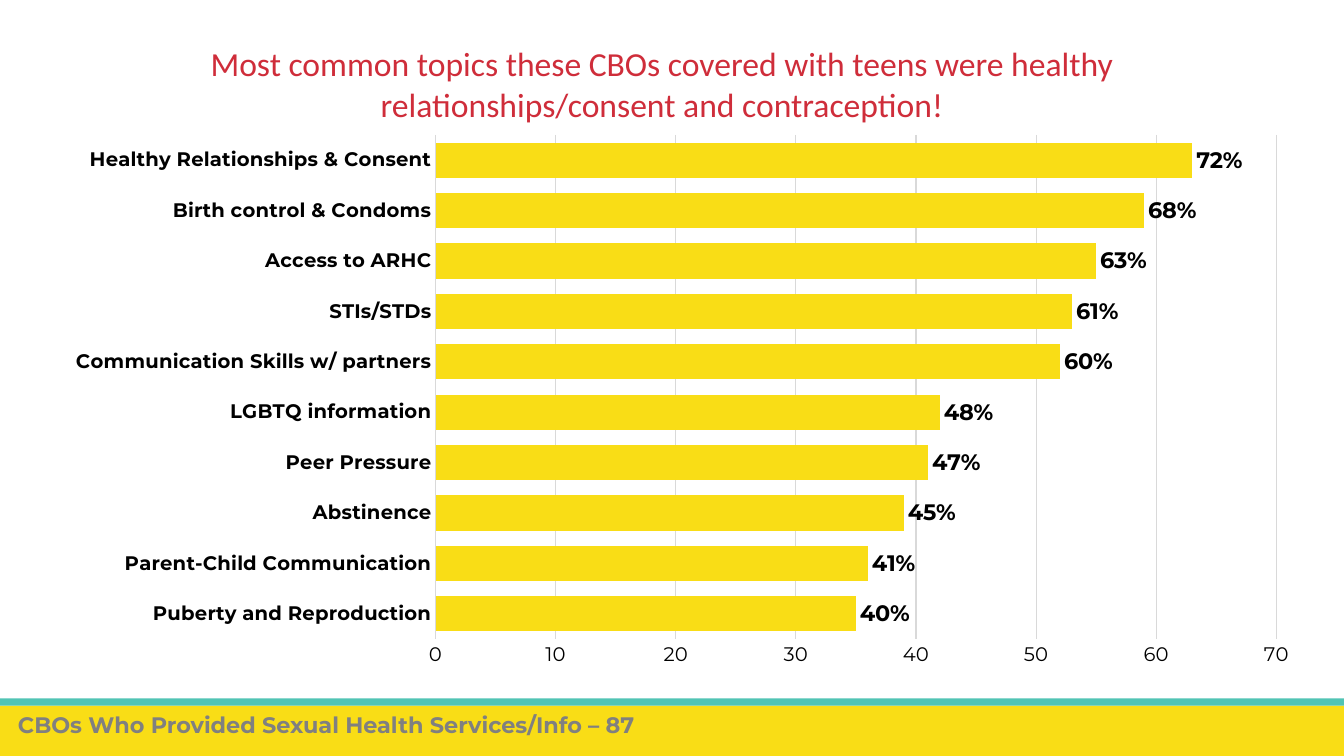
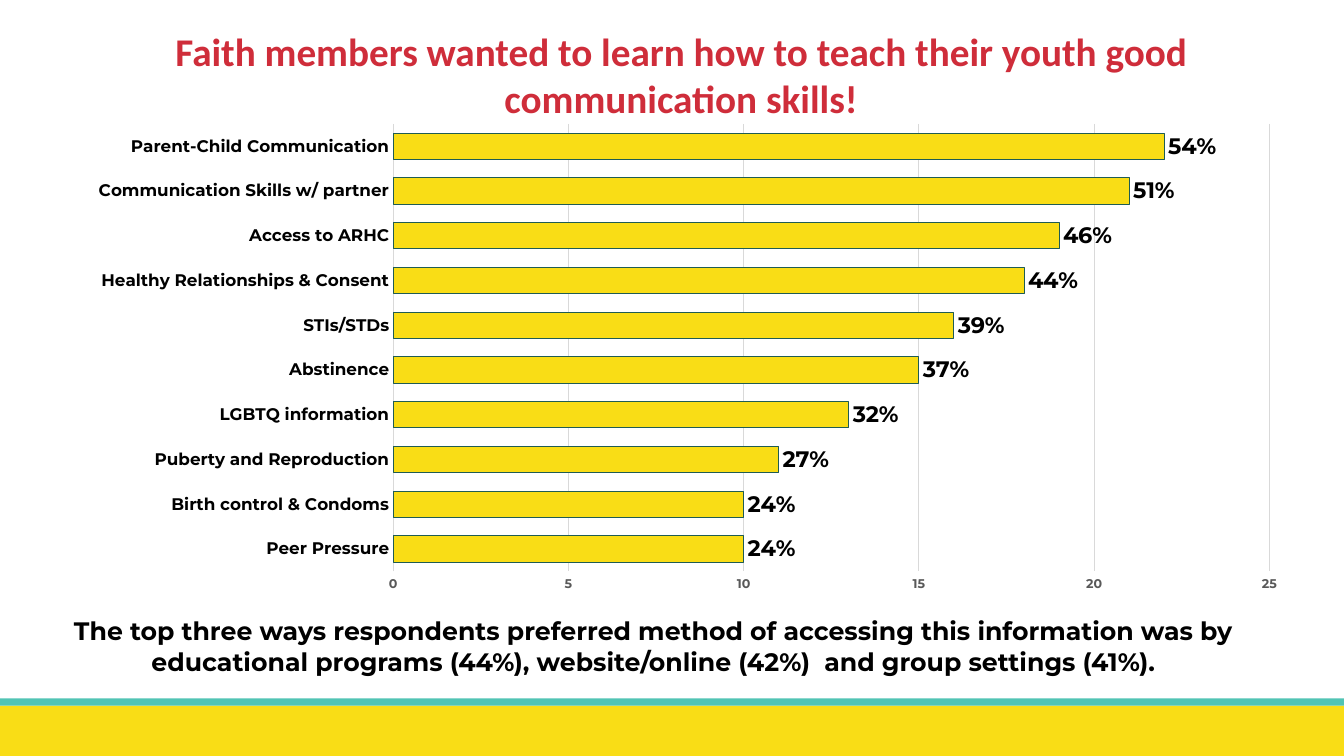
from pptx import Presentation
from pptx import util as u
from pptx.chart import data
from pptx.dml.color import RGBColor
from pptx.enum import chart as charts, shapes, text
from pptx.oxml import parse_xml
from pptx.oxml.ns import nsdecls


class Theme:
    yellow, teal, dark_teal = "F9DD16", "51C4B4", "1F5C53"
    red, black, gray, tick_gray, rule = "CF2D3A", "000000", "808080", "595959", "D9D9D9"
    heading, body = "Calibri", "Montserrat"
    title, big_title, note, label = 24, 28, 18, 16
    category, small_category, tick = 14, 12, 9
    hairline = 0.75


def set_font(font, size, color, name=Theme.body, bold=True):
    values = {"size": u.Pt(size), "name": name, "bold": bold}
    for key, value in values.items():
        setattr(font, key, value)
    font.color.rgb = RGBColor.from_string(color)


def set_line(line, color):
    line.color.rgb = RGBColor.from_string(color)
    line.width = u.Pt(Theme.hairline)


CENTER, LEFT = text.PP_ALIGN.CENTER, text.PP_ALIGN.LEFT

# Each text: words, box, alignment, font values. Topics: name, count, share.
PAGES = [
    {
        "texts": [
            ("Most common topics these CBOs covered with teens were healthy "
             "relationships/consent and contraception!",
             (0.61, 0.38, 11.91, 0.91), CENTER,
             (Theme.title, Theme.red, Theme.heading, False)),
            ("CBOs Who Provided Sexual Health Services/Info – 87",
             (0.08, 7.01, 10.86, 0.37), LEFT, (Theme.label, Theme.gray)),
        ],
        "chart": (0.51, 1.23, 12.53, 5.5),
        "plot": (4.32, 1.34, 8.34, 5),
        "gap": 43, "top": 70, "step": 10, "outline": None,
        "category": (Theme.category, Theme.black),
        "tick": (Theme.category, Theme.black, Theme.body, False),
        "topics": [
            ("Puberty and Reproduction", 35, 0.40),
            ("Parent-Child Communication", 36, 0.41),
            ("Abstinence", 39, 0.45),
            ("Peer Pressure", 41, 0.47),
            ("LGBTQ information", 42, 0.48),
            ("Communication Skills w/ partners", 52, 0.60),
            ("STIs/STDs", 53, 0.61),
            ("Access to ARHC", 55, 0.63),
            ("Birth control & Condoms", 59, 0.68),
            ("Healthy Relationships & Consent", 63, 0.72),
        ],
    },
    {
        "texts": [
            ("Faith members wanted to learn how to teach their youth good "
             "communication skills!",
             (0.73, 0.22, 12.05, 1.04), CENTER,
             (Theme.big_title, Theme.red, Theme.heading)),
            ("The top three ways respondents preferred method of accessing this "
             "information was by educational programs (44%), website/online (42%)  "
             "and group settings (41%).",
             (0.52, 6.06, 11.92, 0.71), CENTER, (Theme.note, Theme.black)),
        ],
        "chart": (0.73, 1.13, 12.18, 4.83),
        "plot": (3.9, 1.23, 8.69, 4.44),
        "gap": 70, "top": 25, "step": 5, "outline": Theme.dark_teal,
        "category": (Theme.small_category, Theme.black),
        "tick": (Theme.tick, Theme.tick_gray),
        "topics": [
            ("Peer Pressure", 10, 0.24),
            ("Birth control & Condoms", 10, 0.24),
            ("Puberty and Reproduction", 11, 0.27),
            ("LGBTQ information", 13, 0.32),
            ("Abstinence", 15, 0.37),
            ("STIs/STDs", 16, 0.39),
            ("Healthy Relationships & Consent", 18, 0.44),
            ("Access to ARHC", 19, 0.46),
            ("Communication Skills w/ partner", 21, 0.51),
            ("Parent-Child Communication", 22, 0.54),
        ],
    },
]

deck = Presentation()
deck.slide_width, deck.slide_height = u.Inches(13.33), u.Inches(7.5)
blank = deck.slide_layouts[6]
pages = [deck.slides.add_slide(blank) for _ in PAGES]

# The footer bands are moved to the master, so every slide shows them.
for number, (top, height, color) in enumerate(
        [(7, 0.5, Theme.yellow), (6.93, 0.07, Theme.teal)]):
    band = pages[0].shapes.add_shape(
        shapes.MSO_SHAPE.RECTANGLE, 0, u.Inches(top), deck.slide_width, u.Inches(height))
    band.shadow.inherit = False
    band.fill.solid()
    band.fill.fore_color.rgb = RGBColor.from_string(color)
    band.line.fill.background()
    band.name = f"Footer band {number + 1}"
    band.element.xpath("./p:nvSpPr/p:cNvPr")[0].set("id", str(100 + number))
    deck.slide_master.shapes.element.append(band.element)

for page, content in zip(pages, PAGES):
    names, counts, shares = zip(*content["topics"])
    table = data.CategoryChartData()
    table.categories = names
    table.add_series("Series 1", counts)
    table.add_series("Series 2", shares)
    area = content["chart"]
    chart = page.shapes.add_chart(
        charts.XL_CHART_TYPE.BAR_STACKED, *map(u.Inches, area), table).chart
    chart.has_legend = chart.has_title = False
    set_font(chart.font, 10, Theme.black, bold=False)

    # Fix the inner plot area as fractions of the chart frame.
    left, top, width, height = content["plot"]
    fractions = {"x": (left - area[0]) / area[2], "y": (top - area[1]) / area[3],
                 "w": width / area[2], "h": height / area[3]}
    parts = "".join(f'<c:{key} val="{value:.4f}"/>' for key, value in fractions.items())
    plot_area = chart.element.xpath(".//c:plotArea")[0]
    for old in plot_area.xpath("./c:layout"):
        plot_area.remove(old)
    plot_area.insert(0, parse_xml(
        f'<c:layout {nsdecls("c")}><c:manualLayout><c:layoutTarget val="inner"/>'
        f'<c:xMode val="edge"/><c:yMode val="edge"/>{parts}</c:manualLayout></c:layout>'))

    for axis, font in [(chart.category_axis, content["category"]),
                       (chart.value_axis, content["tick"])]:
        axis.major_tick_mark = axis.minor_tick_mark = charts.XL_TICK_MARK.NONE
        set_font(axis.tick_labels.font, *font)
    set_line(chart.category_axis.format.line, Theme.rule)
    scale = {"minimum_scale": 0, "maximum_scale": content["top"],
             "major_unit": content["step"], "has_major_gridlines": True}
    for key, value in scale.items():
        setattr(chart.value_axis, key, value)
    chart.value_axis.format.line.fill.background()
    set_line(chart.value_axis.major_gridlines.format.line, Theme.rule)

    plot = chart.plots[0]
    plot.gap_width, plot.overlap, plot.vary_by_categories = content["gap"], 100, False
    bars, label_holder = plot.series
    bars.format.fill.solid()
    bars.format.fill.fore_color.rgb = RGBColor.from_string(Theme.yellow)
    if content["outline"]:
        set_line(bars.format.line, content["outline"])
    else:
        bars.format.line.fill.background()
    label_holder.format.fill.background()
    label_holder.format.line.fill.background()
    labels = label_holder.data_labels
    label_values = {"show_value": True, "number_format": "0%",
                    "number_format_is_linked": False,
                    "position": charts.XL_LABEL_POSITION.INSIDE_BASE}
    for key, value in label_values.items():
        setattr(labels, key, value)
    set_font(labels.font, Theme.label, Theme.black)

    for words, place, alignment, font in content["texts"]:
        box = page.shapes.add_textbox(*map(u.Inches, place))
        box.text_frame.word_wrap = True
        para = box.text_frame.paragraphs[0]
        para.alignment = alignment
        span = para.add_run()
        span.text = words
        set_font(span.font, *font)

deck.save("out.pptx")
